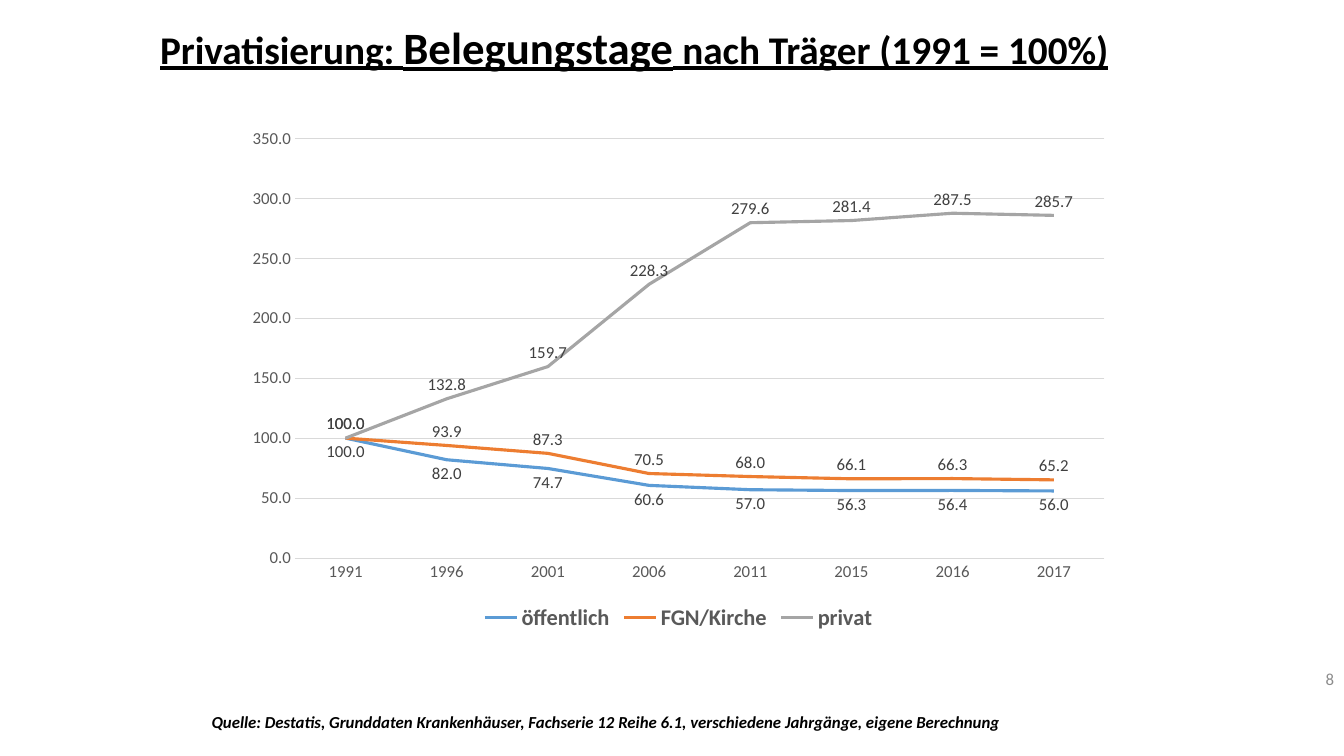
"""Build the slide on hospital occupancy days by type of owner."""
from pptx import Presentation
from pptx.chart.data import CategoryChartData
from pptx.dml.color import RGBColor
from pptx.enum.chart import XL_CHART_TYPE as ChartType
from pptx.enum.chart import XL_LABEL_POSITION as LabelPosition
from pptx.enum.chart import XL_LEGEND_POSITION as LegendPosition
from pptx.enum.chart import XL_TICK_MARK as TickMark
from pptx.enum.text import MSO_ANCHOR as Anchor
from pptx.enum.text import PP_ALIGN as Align
from pptx.util import Inches, Pt

FONT = "Calibri"
COLORS = {
    "text": "000000",
    "number": "8C8C8C",
    "axis": "595959",
    "grid": "D9D9D9",
    "label": "404040",
    "öffentlich": "5B9BD5",
    "FGN/Kirche": "ED7D31",
    "privat": "A5A5A5",
}
TITLE = [("Privatisierung: ", 28), ("Belegungstage", 32), (" nach Träger (1991 = 100%)", 28)]
PAGE_NUMBER = "8"
SOURCE = (
    "Quelle: Destatis, Grunddaten Krankenhäuser, Fachserie 12 Reihe 6.1, "
    "verschiedene Jahrgänge, eigene Berechnung"
)
YEARS = ["1991", "1996", "2001", "2006", "2011", "2015", "2016", "2017"]
OWNERS = [
    ("öffentlich", [100, 82.0, 74.7, 60.6, 57.0, 56.3, 56.4, 56.0], LabelPosition.BELOW),
    ("FGN/Kirche", [100, 93.9, 87.3, 70.5, 68.0, 66.1, 66.3, 65.2], LabelPosition.ABOVE),
    ("privat", [100, 132.8, 159.7, 228.3, 279.6, 281.4, 287.5, 285.7], LabelPosition.ABOVE),
]


def color(name):
    return RGBColor.from_string(COLORS[name])


def style_font(font, size, name, bold=False):
    font.name, font.size, font.bold = FONT, Pt(size), bold
    font.color.rgb = color(name)


def style_line(line, name, width):
    line.color.rgb = color(name)
    line.width = Pt(width)


def add_text(page, area, spans, name, align, anchor, bold=False):
    box = page.shapes.add_textbox(*map(Inches, area))
    frame = box.text_frame
    frame.word_wrap = True
    frame.vertical_anchor = anchor
    para = frame.paragraphs[0]
    para.alignment = align
    style_font(para.font, spans[0][1], name, bold)
    for text, size in spans:
        span = para.add_run()
        span.text = text
        span.font.size = Pt(size)
    return para


def add_line_chart(page, area):
    data = CategoryChartData(number_format="0.0")
    data.categories = YEARS
    for owner, values, _ in OWNERS:
        data.add_series(owner, values)
    chart = page.shapes.add_chart(ChartType.LINE, *map(Inches, area), data).chart
    style_font(chart.font, 10, "text")
    chart.has_title = False
    chart.has_legend = True
    chart.legend.position = LegendPosition.BOTTOM
    chart.legend.include_in_layout = False
    style_font(chart.legend.font, 16, "axis", bold=True)

    for axis in (chart.category_axis, chart.value_axis):
        axis.major_tick_mark = axis.minor_tick_mark = TickMark.NONE
        style_font(axis.tick_labels.font, 12, "axis")
    style_line(chart.category_axis.format.line, "grid", 0.75)
    value_axis = chart.value_axis
    value_axis.minimum_scale, value_axis.maximum_scale, value_axis.major_unit = 0, 350, 50
    value_axis.format.line.fill.background()
    style_line(value_axis.major_gridlines.format.line, "grid", 0.75)
    value_axis.tick_labels.number_format = "0.0"
    value_axis.tick_labels.number_format_is_linked = False

    plot = chart.plots[0]
    plot.vary_by_categories = False
    for series, (owner, _, position) in zip(plot.series, OWNERS):
        series.smooth = False
        style_line(series.format.line, owner, 2.25)
        labels = series.data_labels
        labels.show_value = True
        labels.position = position
        labels.number_format = "0.0"
        labels.number_format_is_linked = False
        style_font(labels.font, 12, "label")


def main():
    deck = Presentation()
    deck.slide_width, deck.slide_height = Inches(13.33), Inches(7.5)
    page = deck.slides.add_slide(deck.slide_layouts[6])

    title = add_text(page, (-0.07, 0.12, 12.72, 0.75), TITLE, "text",
                     Align.CENTER, Anchor.MIDDLE, bold=True)
    title.line_spacing = 0.9
    for span in title.runs:
        span.font.underline = True
    add_text(page, (10.33, 6.53, 3, 0.4), [(PAGE_NUMBER, 12)], "number",
             Align.RIGHT, Anchor.MIDDLE)
    add_line_chart(page, (2.33, 1.17, 8.8, 5.14))
    source = add_text(page, (2, 7.01, 9.41, 0.3), [(SOURCE, 12)], "text",
                      Align.LEFT, Anchor.TOP, bold=True)
    source.font.italic = True

    deck.save("out.pptx")


if __name__ == "__main__":
    main()
